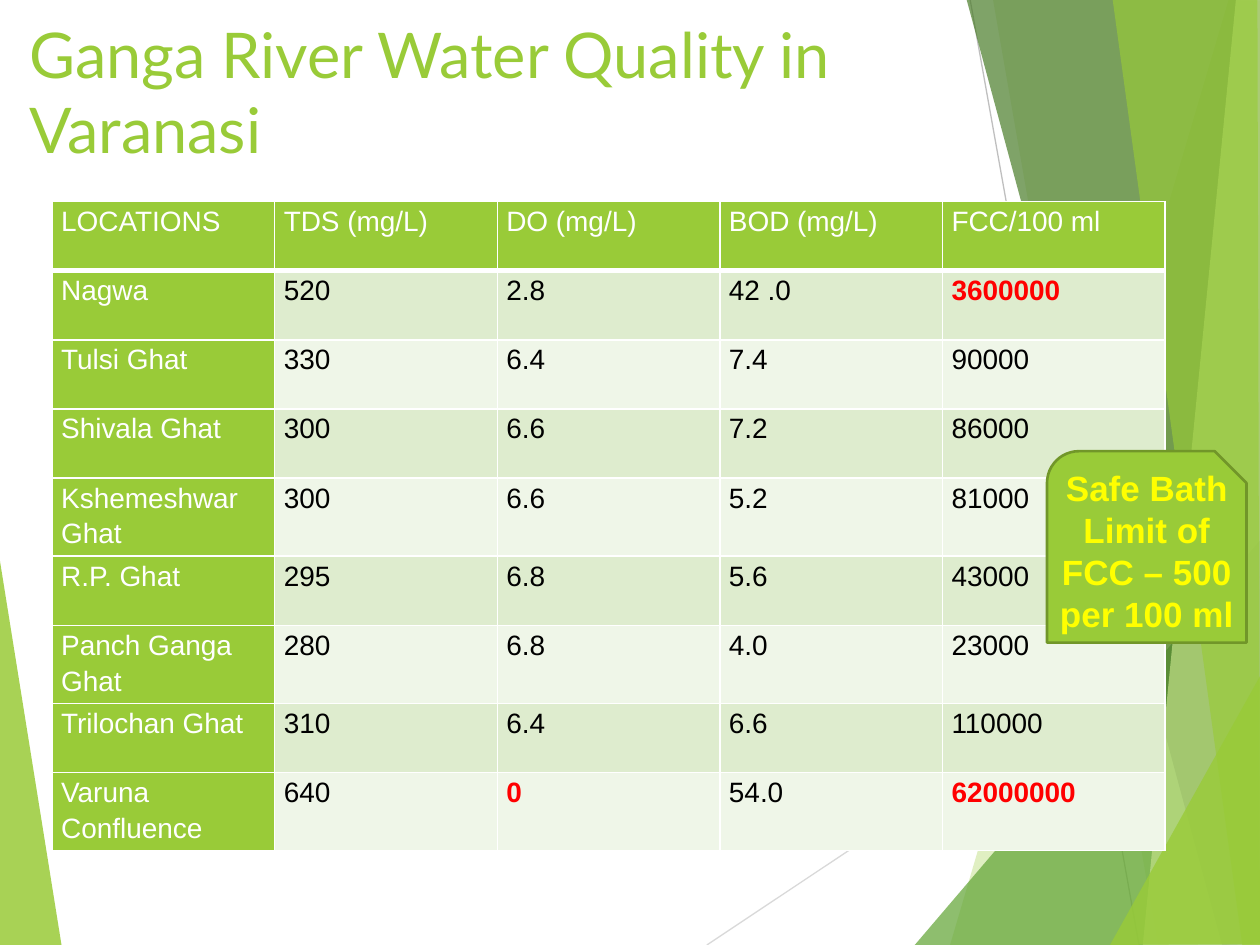
import pptx
import pptx.util
import pptx.dml.color
import pptx.enum.shapes
import pptx.enum.text
import pptx.oxml
import pptx.oxml.ns

Pt = pptx.util.Pt
qn = pptx.oxml.ns.qn
GREEN, WHITE, BLACK, RED = "99CB38", "FFFFFF", "000000", "FF0000"
BANDS = "DEECCE", "EFF6E8"

RAYS = [(5.61, 7.5, 10.01, 4.57, "D9D9D9"), (7.7, 0, 9.04, 7.5, "BFBFBF")]
SHARDS = [
    (GREEN, 85, [(-0.01, 4.39), (0.49, 7.51), (-0.01, 7.5)]),
    (GREEN, 30, [(9.75, 0), (7.54, 7.5), (10.02, 7.51), (10.01, 0.01)]),
    (GREEN, 20, [(7.88, -0.01), (9.19, 7.5), (10.01, 7.5), (10.01, -0.01)]),
    ("63A537", 72, [(7.26, 7.5), (10, 4.29), (10.01, 7.5)]),
    ("4A7C29", 70, [(7.67, -0.01), (9.7, 7.5), (10.01, 7.49), (10.01, -0.01)]),
    ("C2E088", 70, [(9.81, -0.01), (9.07, 7.5), (10.01, 7.5), (10, -0.01)]),
    (GREEN, 65, [(8.83, -0.01), (9.86, 7.5), (10, 7.5), (9.98, -0.01)]),
    (GREEN, 80, [(8.81, 7.5), (10.01, 5.35), (10.01, 7.49)]),
]
ROWS = [
    ("LOCATIONS", "TDS (mg/L)", "DO (mg/L)", "BOD (mg/L)", "FCC/100 ml"),
    ("Nagwa", "520", "2.8", "42 .0", "3600000"),
    ("Tulsi Ghat", "330", "6.4", "7.4", "90000"),
    ("Shivala Ghat", "300", "6.6", "7.2", "86000"),
    ("Kshemeshwar Ghat", "300", "6.6", "5.2", "81000"),
    ("R.P. Ghat", "295", "6.8", "5.6", "43000"),
    ("Panch Ganga Ghat", "280", "6.8", "4.0", "23000"),
    ("Trilochan Ghat", "310", "6.4", "6.6", "110000"),
    ("Varuna Confluence", "640", "0", "54.0", "62000000"),
]
ALARMS = {"3600000", "0", "62000000"}
TALL_ROWS = {4, 6, 8}


def rgb(value):
    return pptx.dml.color.RGBColor.from_string(value)


def fill(obj, color):
    obj.fill.solid()
    obj.fill.fore_color.rgb = rgb(color)


def add_run(p, text, size, font, color, bold=False):
    r = p.add_run()
    r.text = text
    r.font.size = Pt(size)
    r.font.name = font
    r.font.bold = bold
    r.font.color.rgb = rgb(color)


def place(sp, x, y, w, h):
    sp.left, sp.top, sp.width, sp.height = Pt(x), Pt(y), Pt(w), Pt(h)


def add_backdrop(slide, x, y, w, h):
    shapes = slide.shapes.add_group_shape().shapes
    sx, sy = w / 10, h / 7.5

    def at(px, py):
        return Pt(x + px * sx), Pt(y + py * sy)

    def add_shard(color, alpha, points):
        corners = [at(*point) for point in points]
        builder = shapes.build_freeform(*corners[0])
        builder.add_line_segments(corners[1:], close=True)
        sp = builder.convert_to_shape()
        sp.shadow.inherit = False
        fill(sp, color)
        sp.line.fill.background()
        clr = sp.fill._xPr.find(qn("a:solidFill"))[0]
        pptx.oxml.xmlchemy.OxmlElement("a:alpha")
        clr.append(pptx.oxml.xmlchemy.OxmlElement("a:alpha"))
        clr[0].set("val", str(alpha * 1000))

    add_shard(*SHARDS[0])
    for x1, y1, x2, y2, color in RAYS:
        ray = shapes.add_connector(pptx.enum.shapes.MSO_CONNECTOR.STRAIGHT,
                                   *at(x1, y1), *at(x2, y2))
        ray.line.color.rgb = rgb(color)
        ray.line.width = Pt(0.75)
        ray._element.spPr.append(pptx.oxml.xmlchemy.OxmlElement("a:effectLst"))
    for shard in SHARDS[1:]:
        add_shard(*shard)


def add_title(slide, x, y, w, h):
    sp = slide.shapes.title
    place(sp, x, y, w, h)
    slide.shapes._spTree.append(sp._element)
    tf = sp.text_frame
    tf.word_wrap = True
    tf.auto_size = pptx.enum.text.MSO_AUTO_SIZE.NONE
    tf.vertical_anchor = pptx.enum.text.MSO_ANCHOR.TOP
    p = tf.paragraphs[0]
    p.alignment = pptx.enum.text.PP_ALIGN.LEFT
    add_run(p, "Ganga River Water Quality in Varanasi", 36, "Lato", GREEN)


def add_borders(cell, bottom):
    tc_pr = cell._tc.get_or_add_tcPr()
    for side, width in (("L", 1), ("R", 1), ("T", 1), ("B", bottom)):
        ln = pptx.oxml.xmlchemy.OxmlElement("a:ln" + side)
        ln.set("w", str(Pt(width)))
        solid = pptx.oxml.xmlchemy.OxmlElement("a:solidFill")
        clr = pptx.oxml.xmlchemy.OxmlElement("a:srgbClr")
        clr.set("val", WHITE)
        solid.append(clr)
        ln.append(solid)
        tc_pr.append(ln)


def add_quality_table(slide, x, y, w, h):
    columns = len(ROWS[0])
    table = slide.shapes.add_table(len(ROWS), columns,
                                   Pt(x), Pt(y), Pt(w), Pt(h)).table
    table.first_col = True
    tall = 44.6
    short = (h - tall * len(TALL_ROWS)) / (len(ROWS) - len(TALL_ROWS))
    for column in table.columns:
        column.width = Pt(w / columns)
    for i, row in enumerate(ROWS):
        table.rows[i].height = Pt(tall if i in TALL_ROWS else short)
        for j, text in enumerate(row):
            cell = table.cell(i, j)
            heading = i == 0 or j == 0
            alarm = text in ALARMS
            add_borders(cell, 3 if i == 0 else 1)
            fill(cell, GREEN if heading else BANDS[(i - 1) % 2])
            cell.margin_left = cell.margin_right = Pt(5.2)
            cell.margin_top = cell.margin_bottom = 0
            p = cell.text_frame.paragraphs[0]
            p.line_spacing = 1.15
            p.space_after = Pt(12)
            color = WHITE if heading else RED if alarm else BLACK
            add_run(p, text, 16, "Arial", color, alarm)


def add_limit_note(slide, x, y, w, h):
    sp = slide.shapes.add_shape(
        pptx.enum.shapes.MSO_SHAPE.SNIP_ROUND_RECTANGLE,
        Pt(x), Pt(y), Pt(w), Pt(h))
    sp.shadow.inherit = False
    fill(sp, GREEN)
    sp.line.color.rgb = rgb("719629")
    sp.line.width = Pt(1.5)
    inset = 5
    tf = slide.shapes.add_textbox(Pt(x), Pt(y + inset),
                                  Pt(w), Pt(h - inset)).text_frame
    tf.word_wrap = True
    tf.auto_size = pptx.enum.text.MSO_AUTO_SIZE.SHAPE_TO_FIT_TEXT
    for i, text in enumerate(("Safe Bath", "Limit of FCC – 500 per 100 ml")):
        p = tf.add_paragraph() if i else tf.paragraphs[0]
        p.alignment = pptx.enum.text.PP_ALIGN.CENTER
        add_run(p, text, 20, "Arial", "FFFF00", True)


def main():
    prs = pptx.Presentation()
    prs.slide_width, prs.slide_height = Pt(720), Pt(540)
    slide = prs.slides.add_slide(prs.slide_layouts[5])
    add_backdrop(slide, 0, 0, 720, 540)
    add_title(slide, 9.6, 5, 565, 104)
    add_quality_table(slide, 29.8, 115.2, 636, 371)
    add_limit_note(slide, 598.3, 257.8, 114, 109.4)
    prs.save("out.pptx")


if __name__ == "__main__":
    main()
